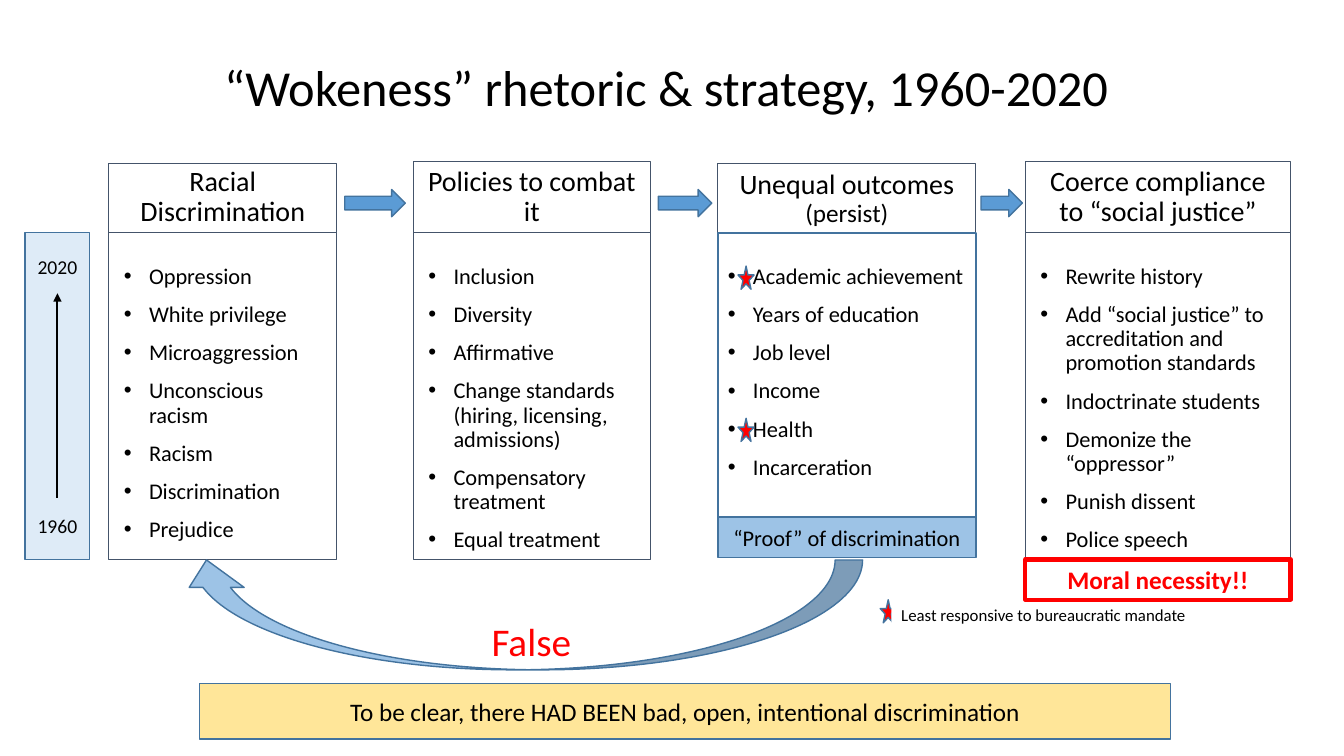
"""Build a slide tracing a four-step argument along a 1960-2020 timeline."""
from lxml import etree
from pptx import Presentation
from pptx.dml.color import RGBColor
from pptx.enum.shapes import MSO_CONNECTOR, MSO_SHAPE
from pptx.enum.text import MSO_ANCHOR, PP_ALIGN
from pptx.oxml.ns import qn
from pptx.util import Inches, Pt

RECTANGLE, STAR = MSO_SHAPE.RECTANGLE, MSO_SHAPE.STAR_5_POINT
RIGHT_ARROW, CURVED_ARROW = MSO_SHAPE.RIGHT_ARROW, MSO_SHAPE.CURVED_LEFT_ARROW
STRAIGHT = MSO_CONNECTOR.STRAIGHT
TOP, MIDDLE, BOTTOM = MSO_ANCHOR.TOP, MSO_ANCHOR.MIDDLE, MSO_ANCHOR.BOTTOM
LEFT, CENTER = PP_ALIGN.LEFT, PP_ALIGN.CENTER

FONT = "Calibri"
COLORS = {
    "black": "000000", "white": "FFFFFF", "red": "FF0000", "slate": "44546A",
    "edge": "43739E", "arrow": "5B9BD5", "sky": "9DC3E6", "pale": "DEEBF7",
    "sand": "FFE699",
}

TITLE = "“Wokeness” rhetoric & strategy, 1960-2020"
YEARS = ["2020", "1960"]
PROOF = "“Proof” of discrimination"
MORAL = "Moral necessity!!"
VERDICT = "False"
LEGEND = "Least responsive to bureaucratic mandate"
FOOTER = "To be clear, there HAD BEEN bad, open, intentional discrimination"
STEPS = [
    {"left": 1.08, "width": 2.26, "top": 1.62, "heading": [("Racial Discrimination", 20)],
     "items": ["Oppression", "White privilege", "Microaggression", "Unconscious racism",
               "Racism", "Discrimination", "Prejudice"]},
    {"left": 4.1, "width": 2.35, "top": 1.6, "heading": [("Policies to combat it", 20)],
     "items": ["Inclusion", "Diversity", "Affirmative",
               "Change standards (hiring, licensing, admissions)",
               "Compensatory treatment", "Equal treatment"]},
    {"left": 7.12, "width": 2.56, "top": 1.62,
     "heading": [("Unequal outcomes ", 20), ("(persist)", 18)],
     "items": ["Academic achievement", "Years of education", "Job level", "Income",
               "Health", "Incarceration"],
     "height": 2.82, "indent": 0.25, "line": ("edge", 1)},
    {"left": 10.17, "width": 2.63, "top": 1.6,
     "heading": [("Coerce compliance to “social justice”", 20)],
     "items": ["Rewrite history",
               "Add “social justice” to accreditation and promotion standards",
               "Indoctrinate students", "Demonize the “oppressor”", "Punish dissent",
               "Police speech"]},
]

WIDTH, HEIGHT = 13.33, 7.5
BODY_TOP, BODY_HEIGHT = 2.31, 3.24
BODY_BOTTOM = BODY_TOP + BODY_HEIGHT
ARROW_TOP, ARROW_HEIGHT = 1.88, 0.27
ARROW_GAPS = [(0.08, 0.08), (0.08, 0.06), (0.05, 0.03)]
LABEL_HEIGHT = 0.4
STAR_SIZE = (0.16, 0.23)
STARS = [(7.32, 2.64), (7.32, 4.15), (8.73, 5.95)]
TIMELINE_LEFT, TIMELINE_WIDTH = 0.25, 0.64


def rgb(name):
    return RGBColor.from_string(COLORS[name])


def add_shape(slide, kind, box, fill=None, line=None):
    shape = slide.shapes.add_shape(kind, *map(Inches, box))
    shape.shadow.inherit = False
    if fill:
        shape.fill.solid()
        shape.fill.fore_color.rgb = rgb(fill)
    else:
        shape.fill.background()
    if line:
        shape.line.color.rgb = rgb(line[0])
        shape.line.width = Pt(line[1])
    else:
        shape.line.fill.background()
    return shape


def style_run(run, size, color="black", bold=False):
    run.font.name = FONT
    run.font.size = Pt(size)
    run.font.color.rgb = rgb(color)
    run.font.bold = bold


def write(shape, lines, size, color="black", bold=False, align=CENTER, anchor=MIDDLE,
          spacing=1.0, before=0):
    frame = shape.text_frame
    frame.word_wrap = True
    frame.vertical_anchor = anchor
    frame.text = "\n".join(lines)
    for index, paragraph in enumerate(frame.paragraphs):
        paragraph.alignment = align
        paragraph.line_spacing = spacing
        paragraph.space_before = Pt(before if index else 0)
        for run in paragraph.runs:
            style_run(run, size, color, bold)


def add_bullets(shape, indent):
    for paragraph in shape.text_frame.paragraphs:
        properties = paragraph._p.get_or_add_pPr()
        properties.set("marL", str(Inches(indent)))
        properties.set("indent", str(-Inches(0.25)))
        etree.SubElement(properties, qn("a:buFont")).set("typeface", "Arial")
        etree.SubElement(properties, qn("a:buChar")).set("char", "•")


def add_step(slide, step):
    left, width, top = step["left"], step["width"], step["top"]
    header = add_shape(slide, RECTANGLE, (left, top, width, BODY_TOP - top),
                       line=("slate", 0.75))
    write(header, [""], 20, anchor=BOTTOM, spacing=0.9)
    for text, size in step["heading"]:
        run = header.text_frame.paragraphs[0].add_run()
        run.text = text
        style_run(run, size)
    body = add_shape(slide, RECTANGLE,
                     (left, BODY_TOP, width, step.get("height", BODY_HEIGHT)),
                     line=step.get("line", ("slate", 0.75)))
    write(body, step["items"], 16, align=LEFT, anchor=TOP, spacing=0.9, before=10)
    body.text_frame.margin_top = Inches(0.32)
    add_bullets(body, step.get("indent", 0.3))


def add_timeline(slide):
    bar = add_shape(slide, RECTANGLE,
                    (TIMELINE_LEFT, BODY_TOP, TIMELINE_WIDTH, BODY_HEIGHT),
                    "pale", ("edge", 1))
    write(bar, YEARS, 14, before=168)
    center = TIMELINE_LEFT + TIMELINE_WIDTH / 2
    arrow = slide.shapes.add_connector(
        STRAIGHT, *map(Inches, (center, 4.94, center, 2.91)))
    arrow.line.color.rgb = rgb("black")
    arrow.line.width = Pt(1.5)
    etree.SubElement(arrow.line._get_or_add_ln(), qn("a:tailEnd")).set("type", "triangle")
    etree.SubElement(arrow._element.spPr, qn("a:effectLst"))


def main():
    presentation = Presentation()
    presentation.slide_width, presentation.slide_height = Inches(WIDTH), Inches(HEIGHT)
    slide = presentation.slides.add_slide(presentation.slide_layouts[6])

    title = slide.shapes.add_textbox(*map(Inches, (0.86, 0.4, 11.5, 0.99)))
    write(title, [TITLE], 36, spacing=0.9)

    for step in STEPS:
        add_step(slide, step)
    for step, following, (before, after) in zip(STEPS, STEPS[1:], ARROW_GAPS):
        start = step["left"] + step["width"] + before
        add_shape(slide, RIGHT_ARROW,
                  (start, ARROW_TOP, following["left"] - after - start, ARROW_HEIGHT),
                  "arrow", ("edge", 1))
    add_timeline(slide)

    loop = add_shape(slide, CURVED_ARROW, (4.62, 2.71, 1.09, 6.78), "sky", ("edge", 1))
    loop.rotation = 90
    for position in STARS:
        add_shape(slide, STAR, position + STAR_SIZE, "red", ("edge", 1))

    outcomes, coercion = STEPS[2:]
    proof_top = BODY_TOP + outcomes["height"]
    labels = [
        (PROOF, (outcomes["left"], proof_top, outcomes["width"], LABEL_HEIGHT),
         "sky", ("edge", 1), {"size": 16}),
        (LEGEND, (8.84, 5.96, 3.05, 0.27), "white", None, {"size": 12, "align": LEFT}),
        (VERDICT, (4.65, 6.16, 1.24, 0.39), "white", None, {"size": 28, "color": "red"}),
        (FOOTER, (1.98, 6.78, 9.63, 0.55), "sand", ("edge", 1), {"size": 18}),
        (MORAL, (coercion["left"], BODY_BOTTOM, coercion["width"], LABEL_HEIGHT),
         "white", ("red", 3), {"size": 18, "color": "red", "bold": True}),
    ]
    for text, box, fill, line, style in labels:
        write(add_shape(slide, RECTANGLE, box, fill, line), [text], **style)

    presentation.save("out.pptx")


if __name__ == "__main__":
    main()
